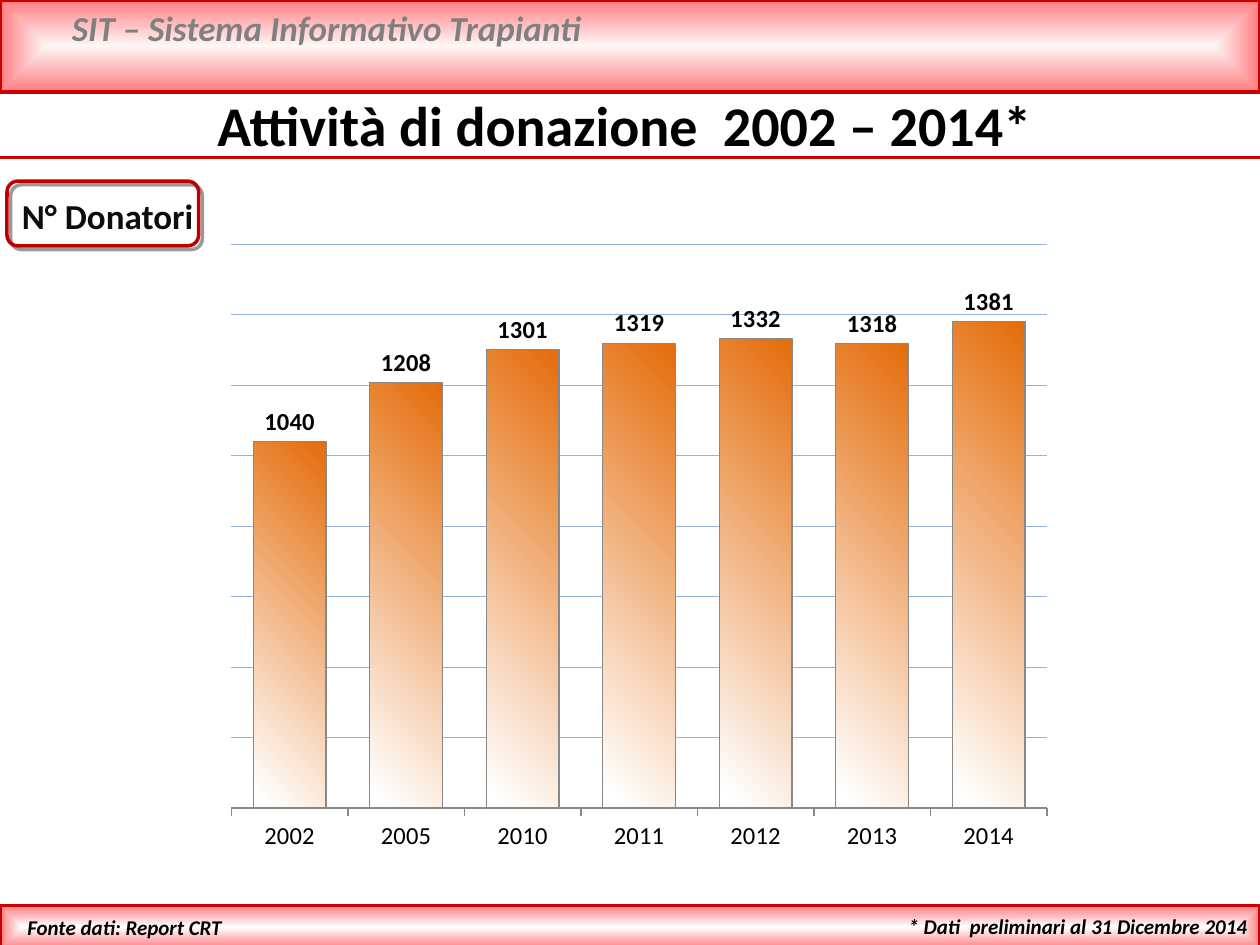
from collections import namedtuple
from dataclasses import dataclass
from lxml.etree import SubElement
from pptx import Presentation
from pptx.chart.data import CategoryChartData
from pptx.dml.color import RGBColor
from pptx.enum.chart import XL_CHART_TYPE, XL_LABEL_POSITION, XL_TICK_MARK
from pptx.enum.shapes import MSO_CONNECTOR, MSO_SHAPE
from pptx.enum.text import MSO_ANCHOR, PP_ALIGN
from pptx.oxml import parse_xml
from pptx.oxml.ns import nsdecls, qn
from pptx.util import Pt

Box = namedtuple("Box", "x y w h")


@dataclass(frozen=True)
class Theme:
    font: str = "Calibri"
    black: str = "000000"
    ink: str = "0D0D0D"
    grey: str = "808080"
    white: str = "FFFFFF"
    pale: str = "FFF6F6"
    pink: str = "FF7C80"
    red: str = "CC0000"
    dark: str = "C00000"
    bar: str = "E46C0A"
    edge: str = "888888"
    grid: str = "95B3D7"
    head: int = 32
    mid: int = 20
    axis: int = 14
    note: int = 12


T = Theme()


def rgb(code):
    return RGBColor.from_string(code)


def points(box):
    return [Pt(v) for v in box]


def stroke(line, color, width):
    line.color.rgb = rgb(color)
    line.width = Pt(width)


def style(font, size, color, bold=False, slant=False):
    font.name = T.font
    font.size = Pt(size)
    font.bold = bold
    font.italic = slant
    font.color.rgb = rgb(color)


def blend(fill, start, end, last=1.0):
    fill.gradient()
    for stop, color, spot in zip(fill.gradient_stops, (start, end), (0, last)):
        stop.color.rgb = rgb(color)
        stop.position = spot


def write(shape, text, size, color, slant=False, align=PP_ALIGN.LEFT):
    frame = shape.text_frame
    frame.word_wrap = True
    frame.text = text
    para = frame.paragraphs[0]
    para.alignment = align
    style(para.runs[0].font, size, color, True, slant)
    return frame


def label(slide, box, *args, **opts):
    return write(slide.shapes.add_textbox(*points(box)), *args, **opts)


def band(slide, box, core):
    shape = slide.shapes.add_shape(MSO_SHAPE.RECTANGLE, *points(box))
    shape.shadow.inherit = False
    stroke(shape.line, T.red, 2)
    blend(shape.fill, core, T.pink)
    grad = shape.element.spPr.find(qn("a:gradFill"))
    grad.remove(grad.find(qn("a:lin")))
    grad.append(parse_xml(
        f'<a:path {nsdecls("a")} path="shape">'
        '<a:fillToRect l="50000" t="50000" r="50000" b="50000"/></a:path>'))


def header(slide, box):
    band(slide, box, T.pale)
    label(slide, Box(box.x + 34, box.y, 646, 32),
          "SIT – Sistema Informativo Trapianti", T.mid, T.grey, slant=True)


def heading(slide, box):
    title = slide.shapes.title
    title.left, title.top, title.width, title.height = points(box)
    frame = write(title, "Attività di donazione  2002 – 2014*",
                  T.head, T.black, align=PP_ALIGN.CENTER)
    frame.vertical_anchor = MSO_ANCHOR.TOP
    low = Pt(box.y + 42)
    rule = slide.shapes.add_connector(
        MSO_CONNECTOR.STRAIGHT, 0, low, Pt(720), low)
    stroke(rule.line, T.red, 2)
    SubElement(rule.element.spPr, qn("a:effectLst"))


def badge(slide, box):
    frame = label(slide, Box(box.x - 4, box.y, 123, box.h),
                  "N° Donatori", T.mid, T.ink)
    frame.margin_left = Pt(12.5)
    frame.margin_right = 0
    frame.margin_top = Pt(7.5)
    shape = slide.shapes.add_shape(MSO_SHAPE.ROUNDED_RECTANGLE, *points(box))
    shape.fill.background()
    stroke(shape.line, T.dark, 2)
    shape.shadow.inherit = False
    glow = shape.element.spPr.find(qn("a:effectLst"))
    glow.append(parse_xml(
        f'<a:outerShdw {nsdecls("a")} dist="{Pt(3)}" dir="2700000">'
        f'<a:srgbClr val="{T.black}"><a:alpha val="40000"/></a:srgbClr>'
        '</a:outerShdw>'))


def graph(slide, box):
    data = CategoryChartData()
    data.categories = ["2002", "2005", "2010", "2011", "2012", "2013", "2014"]
    data.add_series("Donatori", (1040, 1208, 1301, 1319, 1332, 1318, 1381))
    chart = slide.shapes.add_chart(
        XL_CHART_TYPE.COLUMN_CLUSTERED, *points(box), data).chart
    chart.has_legend = False
    chart.has_title = False
    style(chart.font, T.axis, T.black)

    cat = chart.category_axis
    cat.major_tick_mark = XL_TICK_MARK.OUTSIDE
    stroke(cat.format.line, T.edge, 0.75)
    val = chart.value_axis
    val.visible = False
    val.minimum_scale, val.maximum_scale, val.major_unit = 0, 1600, 200
    stroke(val.major_gridlines.format.line, T.grid, 0.75)

    plot = chart.plots[0]
    plot.gap_width = 60
    plot.overlap = -20
    plot.vary_by_categories = False
    plot.has_data_labels = True
    tags = plot.data_labels
    tags.show_value = True
    tags.position = XL_LABEL_POSITION.OUTSIDE_END
    style(tags.font, T.axis, T.black, True)

    bars = plot.series[0]
    bars.invert_if_negative = False
    blend(bars.format.fill, T.bar, T.white, 0.96)
    bars.format.fill.gradient_angle = 225
    stroke(bars.format.line, T.edge, 0.75)

    area = chart.element.find(".//" + qn("c:plotArea"))
    for old in area.findall(qn("c:layout")):
        area.remove(old)
    area.insert(0, parse_xml(
        f'<c:layout {nsdecls("c")}><c:manualLayout>'
        '<c:layoutTarget val="inner"/>'
        '<c:xMode val="edge"/><c:yMode val="edge"/>'
        '<c:x val="0.02"/><c:y val="0.02"/>'
        '<c:w val="0.96"/><c:h val="0.89"/>'
        '</c:manualLayout></c:layout>'))


def footer(slide, box):
    band(slide, box, T.white)
    label(slide, Box(box.x + 8.5, box.y + 1.5, 231, 21.5),
          "Fonte dati: Report CRT", T.note, T.black, slant=True)
    label(slide, Box(box.x + 422.5, box.y + 1, 297.5, 21.5),
          "* Dati  preliminari al 31 Dicembre 2014", T.note, T.black,
          slant=True, align=PP_ALIGN.RIGHT)


def main():
    deck = Presentation()
    deck.slide_width, deck.slide_height = Pt(720), Pt(540)
    slide = deck.slides.add_slide(deck.slide_layouts[5])
    header(slide, Box(0, 0, 720, 52.5))
    footer(slide, Box(0, 517.5, 720, 24.5))
    heading(slide, Box(0, 48, 714, 46))
    badge(slide, Box(4, 103.5, 109.5, 37))
    graph(slide, Box(122.5, 132.5, 485.5, 362))
    deck.save("out.pptx")


if __name__ == "__main__":
    main()
